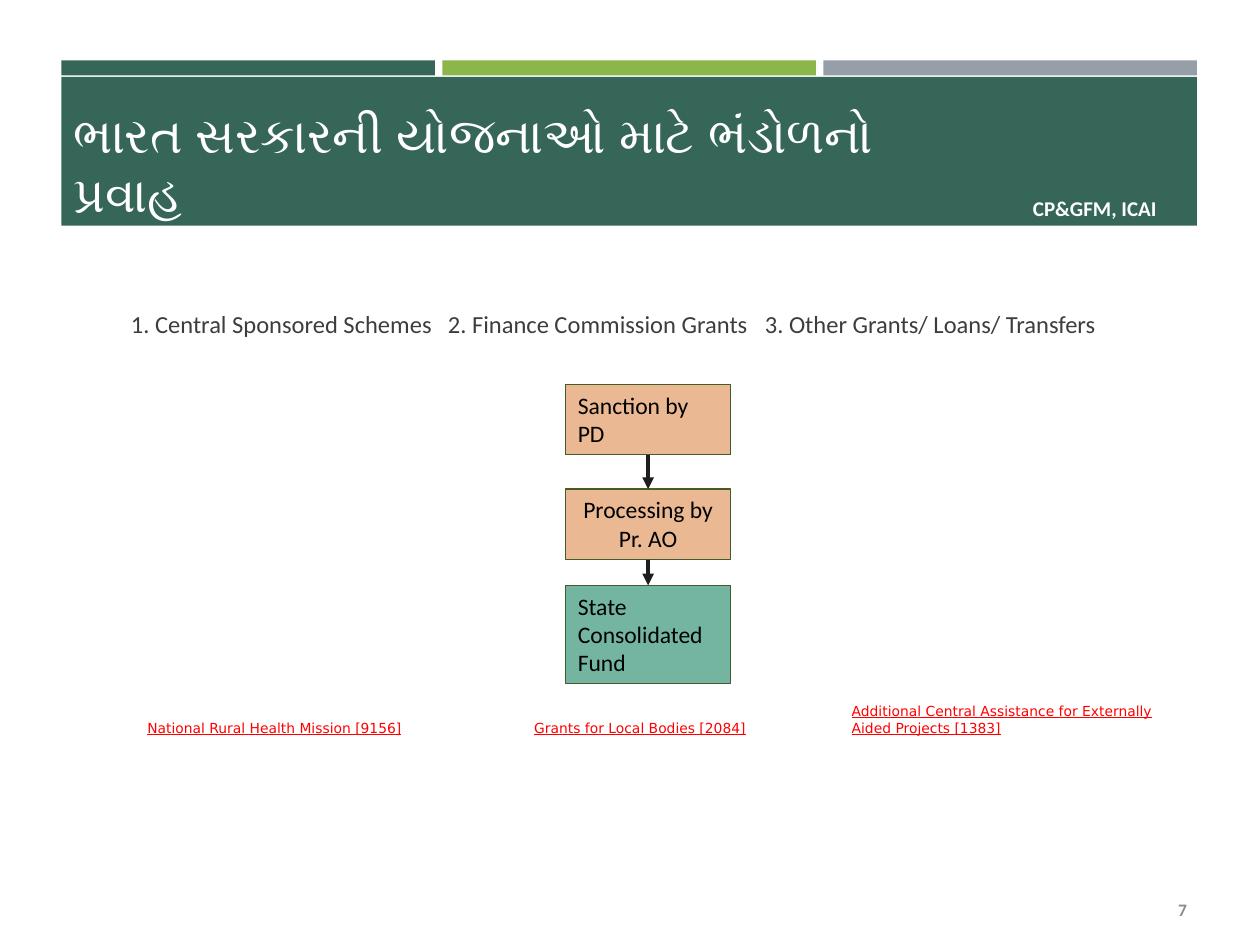
from lxml import etree
from pptx import Presentation
from pptx.dml.color import RGBColor
from pptx.enum.shapes import MSO_CONNECTOR, MSO_SHAPE
from pptx.enum.text import MSO_ANCHOR, PP_ALIGN
from pptx.oxml.ns import qn
from pptx.util import Cm, Pt

RECTANGLE, STRAIGHT = MSO_SHAPE.RECTANGLE, MSO_CONNECTOR.STRAIGHT
TOP, MIDDLE = MSO_ANCHOR.TOP, MSO_ANCHOR.MIDDLE
LEFT, CENTER, RIGHT, JUSTIFY = (
    PP_ALIGN.LEFT, PP_ALIGN.CENTER, PP_ALIGN.RIGHT, PP_ALIGN.JUSTIFY)
BOTTOM_SITE, TOP_SITE = 2, 0

TITLE = "ભારત સરકારની યોજનાઓ માટે ભંડોળનો પ્રવાહ"
CREDIT = "CP&GFM, ICAI"
PAGE_NUMBER = "7"
CATEGORIES = [
    "1. Central Sponsored Schemes",
    "2. Finance Commission Grants",
    "3. Other Grants/ Loans/ Transfers",
]
STEPS = [
    {"text": "Sanction by PD", "top": 7.75, "height": 1.42, "fill": "step", "align": LEFT},
    {"text": "Processing by Pr. AO", "top": 9.86, "height": 1.42, "fill": "step", "align": CENTER},
    {"text": "State Consolidated Fund", "top": 11.8, "height": 1.98, "fill": "fund", "align": LEFT},
]
SCHEMES = [
    ("National Rural Health Mission [9156]", (2.72, 14.38, 5.72, 0.58), False),
    ("Grants for Local Bodies [2084]", (10.52, 14.38, 4.85, 0.58), False),
    ("Additional Central Assistance for Externally Aided Projects [1383]",
     (16.92, 14.05, 7.24, 0.94), True),
]

THEME = {
    "colors": {
        "banner": "366658", "green": "8CB64A", "gray": "969FA7",
        "step": "EAB994", "fund": "74B5A2", "edge": "465B25", "arrow": "1E1E1E",
    },
    "text": {
        "title": {"name": "Calibri", "size": 28, "bold": True, "color": "FFFFFF"},
        "credit": {"name": "Calibri", "size": 12, "bold": True, "color": "FFFFFF"},
        "category": {"name": "Calibri", "size": 14, "color": "3D3D3D"},
        "step": {"name": "Calibri", "size": 13.5, "color": "000000"},
        "scheme": {"name": "DejaVu Sans", "size": 7.9, "underline": True, "color": "FF0000"},
        "number": {"name": "Calibri", "size": 10, "bold": True, "color": "8C8C8C"},
    },
    "edge_width": 0.75,
    "arrow_width": 2.25,
}

BANNER = (1.24, 1.55, 22.89, 3)
STRIP_TOP, STRIP_HEIGHT, STRIP_GAP = 1.22, 0.3, 0.15
STEP_LEFT, STEP_WIDTH = 11.4, 3.33
CATEGORY_PITCH = 6.39


def theme_color(name):
    """Return a theme color by its name."""
    return RGBColor.from_string(THEME["colors"][name])


def write_text(box, text, style, align=LEFT, anchor=TOP, wrap=True):
    """Put one styled paragraph into a box and return the paragraph."""
    frame = box.text_frame
    frame.word_wrap = wrap
    frame.vertical_anchor = anchor
    para = frame.paragraphs[0]
    para.alignment = align
    span = para.add_run()
    span.text = text
    for key, value in THEME["text"][style].items():
        if key == "color":
            span.font.color.rgb = RGBColor.from_string(value)
        else:
            setattr(span.font, key, Pt(value) if key == "size" else value)
    return para


def add_text(page, place, text, style, **layout):
    """Add a text box and return its box and paragraph."""
    box = page.shapes.add_textbox(*map(Cm, place))
    return box, write_text(box, text, style, **layout)


def add_block(page, place, fill, edged=False):
    """Add a filled rectangle, with a thin edge if asked."""
    block = page.shapes.add_shape(RECTANGLE, *map(Cm, place))
    block.shadow.inherit = False
    block.fill.solid()
    block.fill.fore_color.rgb = theme_color(fill)
    if edged:
        block.line.color.rgb = theme_color("edge")
        block.line.width = Pt(THEME["edge_width"])
    else:
        block.line.fill.background()
    return block


def add_arrow(page, upper, lower):
    """Join two blocks with a downward arrow."""
    arrow = page.shapes.add_connector(STRAIGHT, 0, 0, 0, 0)
    arrow.begin_connect(upper, BOTTOM_SITE)
    arrow.end_connect(lower, TOP_SITE)
    arrow.line.color.rgb = theme_color("arrow")
    arrow.line.width = Pt(THEME["arrow_width"])
    etree.SubElement(arrow.line._get_or_add_ln(), qn("a:tailEnd"), type="triangle")
    etree.SubElement(arrow._element.spPr, qn("a:effectLst"))


def add_header(page):
    """Draw the three strips, the banner, the credit and the title."""
    left, _, width, _ = BANNER
    strip_width = (width - 2 * STRIP_GAP) / 3
    for index, fill in enumerate(("banner", "green", "gray")):
        strip_left = left + index * (strip_width + STRIP_GAP)
        add_block(page, (strip_left, STRIP_TOP, strip_width, STRIP_HEIGHT), fill)
    add_block(page, BANNER, "banner")
    credit = add_block(page, (20.29, 3.96, 3.56, 0.46), "banner")
    write_text(credit, CREDIT, "credit", align=CENTER, anchor=MIDDLE)
    add_text(page, (1.24, 1.9, 18.64, 2.8), TITLE, "title", anchor=MIDDLE)


def add_categories(page):
    """Set the categories on one line at equal tab stops."""
    box, para = add_text(page, (0.48, 6.1, 23.42, 9.04), "\t".join(CATEGORIES),
                         "category", align=JUSTIFY)
    box.text_frame.margin_left = Cm(2.16)
    tabs = etree.SubElement(para._p.get_or_add_pPr(), qn("a:tabLst"))
    for index in range(1, len(CATEGORIES)):
        etree.SubElement(tabs, qn("a:tab"), pos=str(Cm(index * CATEGORY_PITCH)), algn="l")


def add_flow(page):
    """Draw the steps and the arrows between them."""
    blocks = []
    for step in STEPS:
        place = (STEP_LEFT, step["top"], STEP_WIDTH, step["height"])
        block = add_block(page, place, step["fill"], edged=True)
        write_text(block, step["text"], "step", align=step["align"])
        blocks.append(block)
    for upper, lower in zip(blocks, blocks[1:]):
        add_arrow(page, upper, lower)


def main():
    """Build the deck and save it."""
    deck = Presentation()
    deck.slide_width, deck.slide_height = Cm(25.4), Cm(19.05)
    page = deck.slides.add_slide(deck.slide_layouts[6])
    add_header(page)
    add_categories(page)
    add_flow(page)
    for text, place, wrap in SCHEMES:
        add_text(page, place, text, "scheme", wrap=wrap)
    add_text(page, (22.05, 17.83, 2.13, 1.02), PAGE_NUMBER, "number",
             align=RIGHT, anchor=MIDDLE)
    deck.save("out.pptx")


if __name__ == "__main__":
    main()
